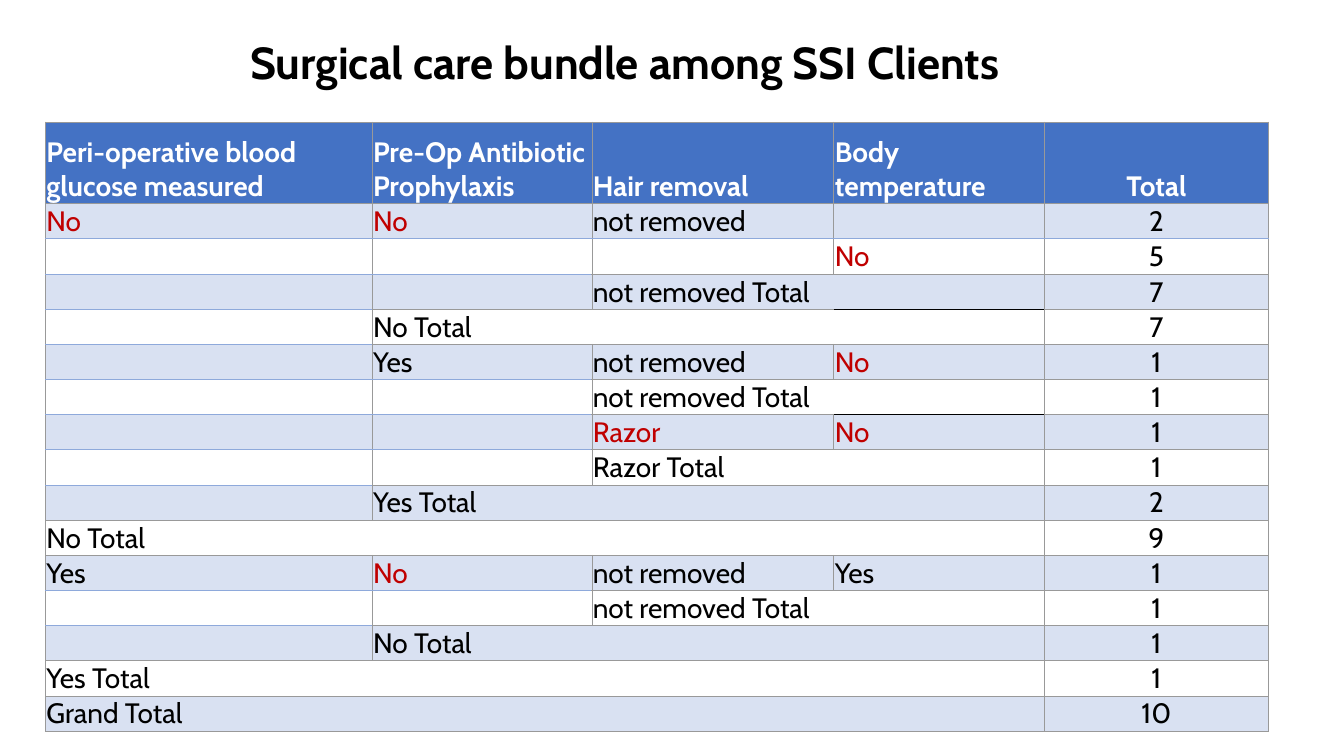
from lxml.etree import SubElement
from pptx import Presentation
from pptx.dml.color import RGBColor
from pptx.enum.text import MSO_ANCHOR, PP_ALIGN
from pptx.oxml.ns import qn
from pptx.util import Inches, Pt

COLORS = {"header": "4472C4", "band": "D9E1F2", "grid": "999999",
          "group": "8EA9DB", "alert": "C00000", "text": "000000", "white": "FFFFFF"}
FONT = "Cabin"
COLUMN_WIDTHS = [3.24, 2.18, 2.4, 0.23, 1.86, 2.22]
TOTAL_COLUMN = 5
# The four care columns, the client count, and the first and last merged column
ROWS = [
    ("Peri-operative blood glucose measured", "Pre-Op Antibiotic Prophylaxis",
     "Hair removal", "Body temperature", "Total", (3, 4)),
    ("No", "No", "not removed", "", "2", (3, 4)),
    ("", "", "", "No", "5", (3, 4)),
    ("", "", "not removed Total", "", "7", (2, 4)),
    ("", "No Total", "", "", "7", (3, 4)),
    ("", "Yes", "not removed", "No", "1", (3, 4)),
    ("", "", "not removed Total", "", "1", (2, 4)),
    ("", "", "Razor", "No", "1", (3, 4)),
    ("", "", "Razor Total", "", "1", (3, 4)),
    ("", "Yes Total", "", "", "2", (3, 4)),
    ("No Total", "", "", "", "9", (3, 4)),
    ("Yes", "No", "not removed", "Yes", "1", (3, 4)),
    ("", "", "not removed Total", "", "1", (2, 4)),
    ("", "No Total", "", "", "1", (2, 3)),
    ("Yes Total", "", "", "", "1", (2, 3)),
    ("Grand Total", "", "", "", "10", (2, 3)),
]
BLACK_TOP_ROWS = (4, 7)  # black rule above the body temperature cell


def style_run(run, size, color, bold):
    formats = {"name": FONT, "size": Pt(size), "bold": bold}
    for name, value in formats.items():
        setattr(run.font, name, value)
    run.font.color.rgb = RGBColor.from_string(COLORS[color])


def horizontal_color(below, column):
    """Colour of the line on top of row `below`: blue inside a group."""
    if below in BLACK_TOP_ROWS and column in (3, 4):
        return "text"
    if below == 2 or (0 < below < len(ROWS) and column < first_labels[below]):
        return "group"
    return "grid"


presentation = Presentation()
presentation.slide_width, presentation.slide_height = Inches(13.33), Inches(7.5)
slide = presentation.slides.add_slide(presentation.slide_layouts[5])

title = slide.shapes.title
title.left, title.top = Inches(0.45), Inches(0.25)
title.width, title.height = Inches(11.5), Inches(0.78)
title.text_frame.vertical_anchor = MSO_ANCHOR.MIDDLE
heading = title.text_frame.paragraphs[0]
heading.alignment, heading.line_spacing = PP_ALIGN.CENTER, 0.9
heading_run = heading.add_run()
heading_run.text = "Surgical care bundle among SSI Clients"
style_run(heading_run, 32, "text", True)

table = slide.shapes.add_table(len(ROWS), len(COLUMN_WIDTHS), Inches(0.45), Inches(1.21),
                               Inches(sum(COLUMN_WIDTHS)), Inches(5.61)).table
table.first_row = table.horz_banding = False
for column, width in zip(table.columns, COLUMN_WIDTHS):
    column.width = Inches(width)
for index, table_row in enumerate(table.rows):
    table_row.height = Inches(0.32 if index else 0.81)

first_labels = [next(i for i, text in enumerate(row) if text) for row in ROWS]

for row, (*labels, count, merged) in enumerate(ROWS):
    first_label = first_labels[row]
    is_total = row > 0 and labels[first_label].endswith("Total")
    for column, text in enumerate([*labels, "", count]):
        cell = table.cell(row, column)
        for side in ("left", "right", "top"):
            setattr(cell, f"margin_{side}", Inches(0.01))
        cell.margin_bottom = 0
        cell.vertical_anchor = MSO_ANCHOR.BOTTOM

        paragraph = cell.text_frame.paragraphs[0]
        if column == TOTAL_COLUMN:
            paragraph.alignment = PP_ALIGN.CENTER
        if text:
            run = paragraph.add_run()
            run.text = text
            alert = "alert" if text in ("No", "Razor") else "text"
            style_run(run, 20, alert if row else "white", row == 0)
        else:
            SubElement(paragraph._p, qn("a:endParaRPr"), sz="1800")

        # A total label runs on to the count without inner lines
        open_left = is_total and first_label < column < TOTAL_COLUMN
        open_right = is_total and first_label <= column < TOTAL_COLUMN - 1
        borders = {"lnL": None if open_left else "grid",
                   "lnR": None if open_right else "grid",
                   "lnT": horizontal_color(row, column),
                   "lnB": horizontal_color(row + 1, column)}
        properties = cell._tc.get_or_add_tcPr()
        for tag, color in borders.items():
            line = SubElement(properties, qn(f"a:{tag}"), w=str(Pt(0.5)))
            if color:
                fill = SubElement(line, qn("a:solidFill"))
                SubElement(fill, qn("a:srgbClr"), val=COLORS[color])
            else:
                SubElement(line, qn("a:noFill"))

        if row % 2 or row == 0:
            cell.fill.solid()
            cell.fill.fore_color.rgb = RGBColor.from_string(COLORS["band" if row else "header"])
        else:
            cell.fill.background()
    table.cell(row, merged[0]).merge(table.cell(row, merged[1]))

presentation.save("out.pptx")
